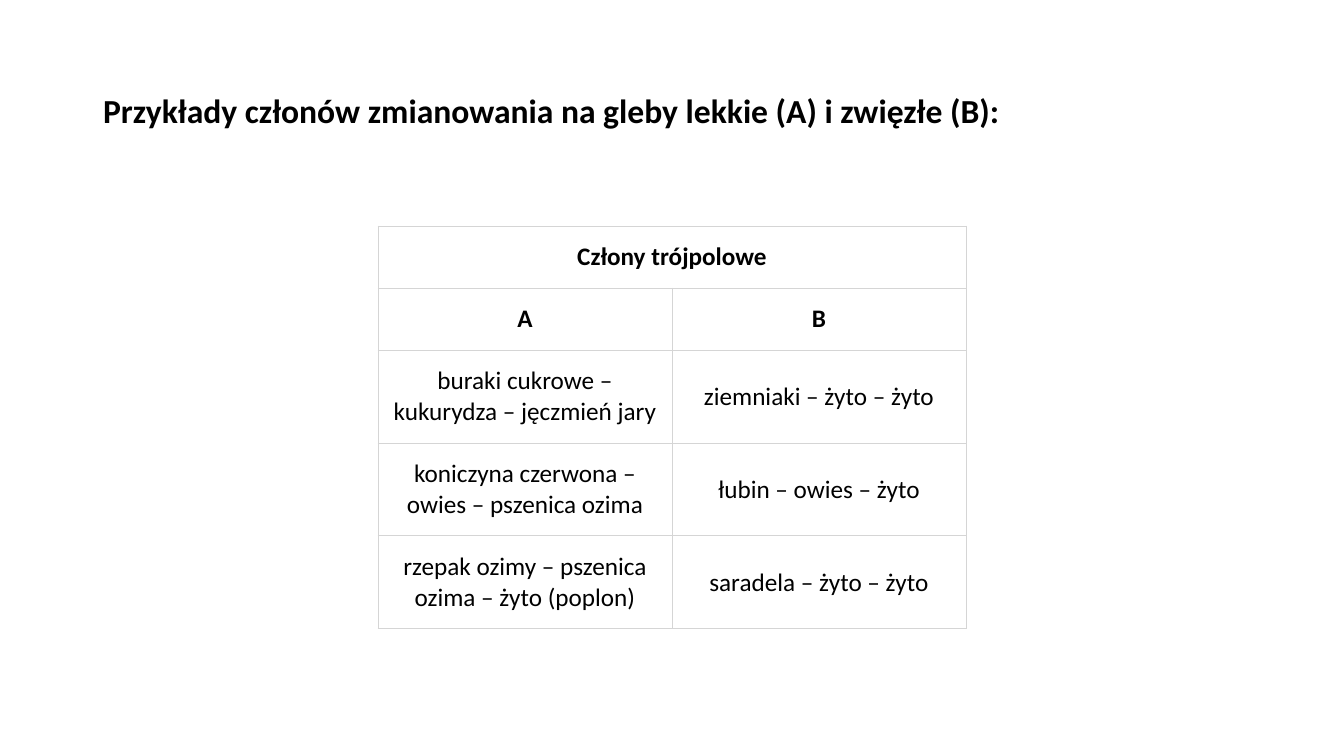
from lxml import etree
from pptx import Presentation
from pptx import util as u
from pptx.dml.color import RGBColor
from pptx.enum import text
from pptx.oxml import ns

EMU_PER_PX = 914400 / 100.8
HEADING = "Przykłady członów zmianowania na gleby lekkie (A) i zwięzłe (B):"
CROP_ROWS = [
    ("Człony trójpolowe", ""),
    ("A", "B"),
    ("buraki cukrowe – kukurydza – jęczmień jary", "ziemniaki – żyto – żyto"),
    ("koniczyna czerwona – owies – pszenica ozima", "łubin – owies – żyto"),
    ("rzepak ozimy – pszenica ozima – żyto (poplon)", "saradela – żyto – żyto"),
]
HEADER_ROWS = 2


def px(length):
    return u.Emu(round(length * EMU_PER_PX))


def rgb(value):
    return RGBColor.from_string(value)


class SlideBuilder:
    font = "Calibri"
    ink = "000000"
    paper = "FFFFFF"
    grid = "D5D5D5"
    cell_inset = 15

    def __init__(self, slide):
        self.slide = slide

    def add_words(self, paragraph, words, size, bold, align):
        paragraph.alignment = align
        run = paragraph.add_run()
        run.text = words
        run.font.name = self.font
        run.font.size = u.Pt(size)
        run.font.bold = bold
        run.font.color.rgb = rgb(self.ink)

    def title(self, words, left, top, width, height):
        heading = self.slide.shapes.title
        heading.left, heading.top = px(left), px(top)
        heading.width, heading.height = px(width), px(height)
        frame = heading.text_frame
        frame.word_wrap = True
        frame.auto_size = text.MSO_AUTO_SIZE.NONE
        frame.vertical_anchor = text.MSO_ANCHOR.MIDDLE
        frame.paragraphs[0].line_spacing = 0.9
        self.add_words(frame.paragraphs[0], words, 24, True, text.PP_ALIGN.LEFT)

    def border(self, cell):
        """Draw a thin line on all four sides of the cell."""
        properties = cell._tc.get_or_add_tcPr()
        for place, side in enumerate(("lnL", "lnR", "lnT", "lnB")):
            line = etree.Element(ns.qn(f"a:{side}"), w=str(u.Pt(0.75)))
            fill = etree.SubElement(line, ns.qn("a:solidFill"))
            etree.SubElement(fill, ns.qn("a:srgbClr"), val=self.grid)
            properties.insert(place, line)

    def cell(self, cell, words, bold):
        cell.fill.solid()
        cell.fill.fore_color.rgb = rgb(self.paper)
        self.border(cell)
        cell.vertical_anchor = text.MSO_ANCHOR.MIDDLE
        cell.margin_left = cell.margin_right = px(self.cell_inset)
        cell.margin_top = cell.margin_bottom = px(self.cell_inset)
        if words:
            self.add_words(cell.text_frame.paragraphs[0], words, 18, bold, text.PP_ALIGN.CENTER)

    def table(self, rows, left, top, column_width, header_height, row_height):
        columns = len(rows[0])
        heights = [header_height if i < HEADER_ROWS else row_height for i in range(len(rows))]
        crops = self.slide.shapes.add_table(
            len(rows), columns, px(left), px(top),
            px(columns * column_width), px(sum(heights))).table
        crops.first_row = crops.horz_banding = False
        crops.cell(0, 0).merge(crops.cell(0, columns - 1))
        for r, (entries, height) in enumerate(zip(rows, heights)):
            crops.rows[r].height = px(height)
            for c, words in enumerate(entries):
                self.cell(crops.cell(r, c), words, r < HEADER_ROWS)


def main():
    deck = Presentation()
    deck.slide_width, deck.slide_height = px(1344), px(756)
    builder = SlideBuilder(deck.slides.add_slide(deck.slide_layouts[5]))
    builder.title(HEADING, 93, 40, 1159, 146)
    builder.table(CROP_ROWS, 378, 226, 294, 62, 93)
    deck.save("out.pptx")


if __name__ == "__main__":
    main()
